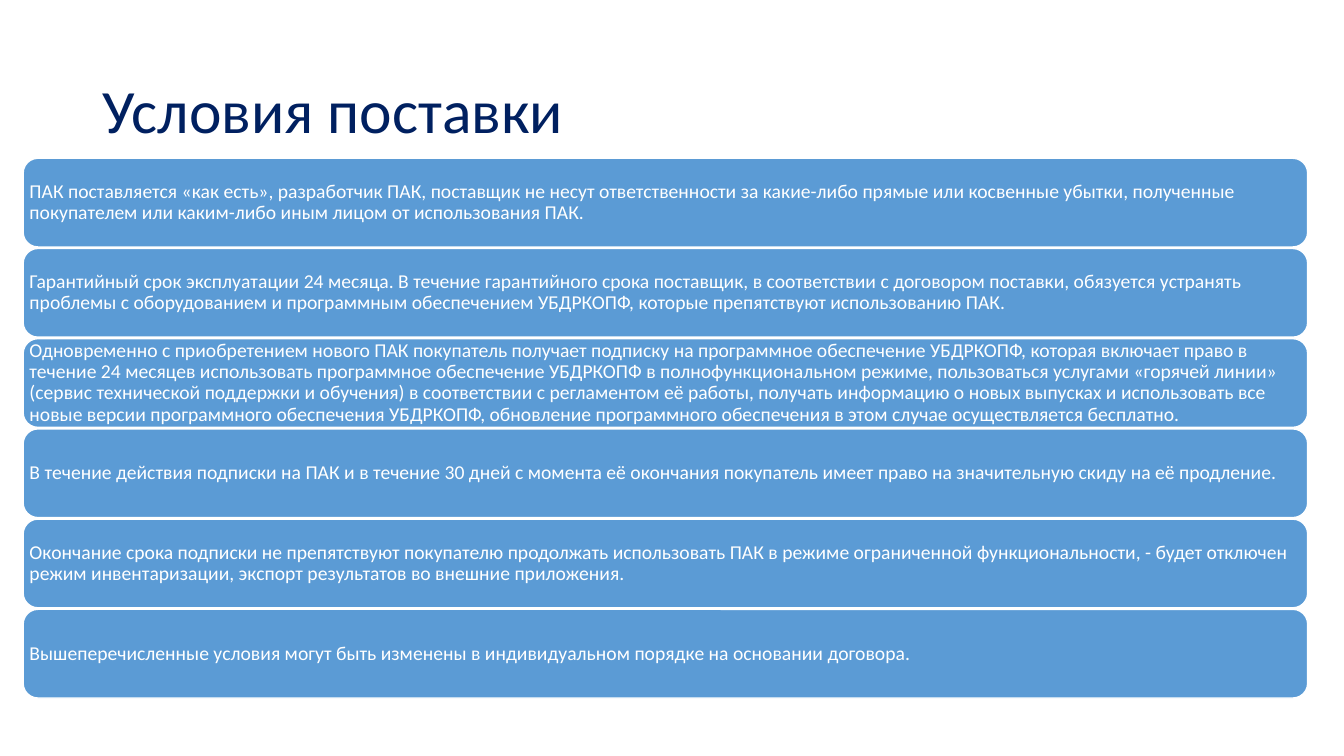
from dataclasses import dataclass

from pptx import Presentation
from pptx.dml.color import RGBColor
from pptx.enum.shapes import MSO_SHAPE
from pptx.enum.text import MSO_ANCHOR, MSO_AUTO_SIZE, PP_ALIGN
from pptx.slide import Slide
from pptx.text.text import TextFrame
from pptx.util import Inches, Pt


@dataclass(frozen=True)
class Theme:
    font: str = "Calibri"
    title_size: int = 44
    body_size: int = 14
    title_color: RGBColor = RGBColor(0x00, 0x20, 0x60)
    panel_color: RGBColor = RGBColor(0x5B, 0x9B, 0xD5)
    white: RGBColor = RGBColor(0xFF, 0xFF, 0xFF)
    line_spacing: float = 0.9


@dataclass(frozen=True)
class Panel:
    text: str
    top: float


THEME = Theme()
PANEL_LEFT, PANEL_WIDTH, PANEL_HEIGHT = 0.23, 12.74, 0.88
FIRST_TOP, PANEL_STEP = 1.57, 0.895
PANEL_INSET = 0.02

TITLE = "Условия поставки"
CONDITIONS = (
    "ПАК поставляется «как есть», разработчик ПАК, поставщик не несут ответственности "
    "за какие-либо прямые или косвенные убытки, полученные покупателем или каким-либо "
    "иным лицом от использования ПАК.",
    "Гарантийный срок эксплуатации 24 месяца. В течение гарантийного срока поставщик, "
    "в соответствии с договором поставки, обязуется устранять проблемы с оборудованием "
    "и программным обеспечением УБДРКОПФ, которые препятствуют использованию ПАК.",
    "Одновременно с приобретением нового ПАК покупатель получает подписку на программное "
    "обеспечение УБДРКОПФ, которая включает право в течение 24 месяцев использовать "
    "программное обеспечение УБДРКОПФ в полнофункциональном режиме, пользоваться услугами "
    "«горячей линии» (сервис технической поддержки и обучения) в соответствии с регламентом "
    "её работы, получать информацию о новых выпусках и использовать все новые версии "
    "программного обеспечения УБДРКОПФ, обновление программного обеспечения в этом случае "
    "осуществляется бесплатно.",
    "В течение действия подписки на ПАК и в течение 30 дней с момента её окончания "
    "покупатель имеет право на значительную скиду на её продление.",
    "Окончание срока подписки не препятствуют покупателю продолжать использовать ПАК "
    "в режиме ограниченной функциональности, - будет отключен режим инвентаризации, "
    "экспорт результатов во внешние приложения.",
    "Вышеперечисленные условия могут быть изменены в индивидуальном порядке "
    "на основании договора.",
)


def write_text(frame: TextFrame, text: str, size: int, color: RGBColor) -> None:
    frame.text = text
    frame.word_wrap = True
    frame.auto_size = MSO_AUTO_SIZE.NONE
    frame.vertical_anchor = MSO_ANCHOR.MIDDLE
    paragraph = frame.paragraphs[0]
    paragraph.alignment = PP_ALIGN.LEFT
    paragraph.line_spacing = THEME.line_spacing
    paragraph.font.name = THEME.font
    paragraph.font.size = Pt(size)
    paragraph.font.color.rgb = color


def add_title(slide: Slide) -> None:
    title = slide.shapes.title
    title.left, title.top = Inches(0.92), Inches(0.4)
    title.width, title.height = Inches(11.5), Inches(1.45)
    write_text(title.text_frame, TITLE, THEME.title_size, THEME.title_color)


def add_panel(slide: Slide, panel: Panel) -> None:
    shape = slide.shapes.add_shape(
        MSO_SHAPE.ROUNDED_RECTANGLE,
        Inches(PANEL_LEFT), Inches(panel.top), Inches(PANEL_WIDTH), Inches(PANEL_HEIGHT),
    )
    shape.shadow.inherit = False
    shape.fill.solid()
    shape.fill.fore_color.rgb = THEME.panel_color
    shape.line.color.rgb = THEME.white
    shape.line.width = Pt(1)
    frame = shape.text_frame
    frame.margin_left = frame.margin_right = Inches(PANEL_INSET)
    frame.margin_top = frame.margin_bottom = Inches(PANEL_INSET)
    write_text(frame, panel.text, THEME.body_size, THEME.white)


def main() -> None:
    presentation = Presentation()
    presentation.slide_width, presentation.slide_height = Inches(13.33), Inches(7.5)
    slide = presentation.slides.add_slide(presentation.slide_layouts.get_by_name("Title Only"))
    add_title(slide)
    for index, text in enumerate(CONDITIONS):
        add_panel(slide, Panel(text, FIRST_TOP + index * PANEL_STEP))
    presentation.save("out.pptx")


if __name__ == "__main__":
    main()
